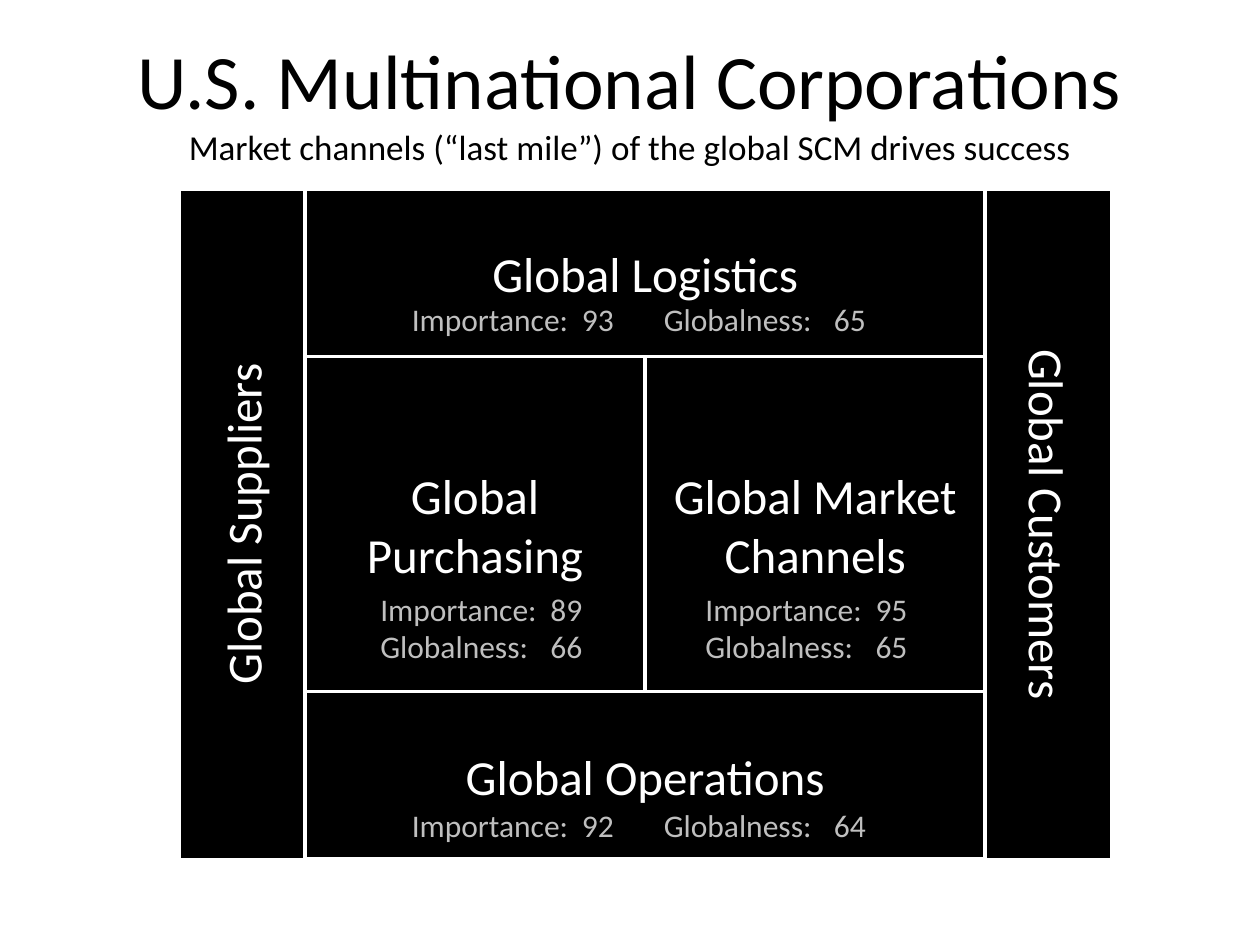
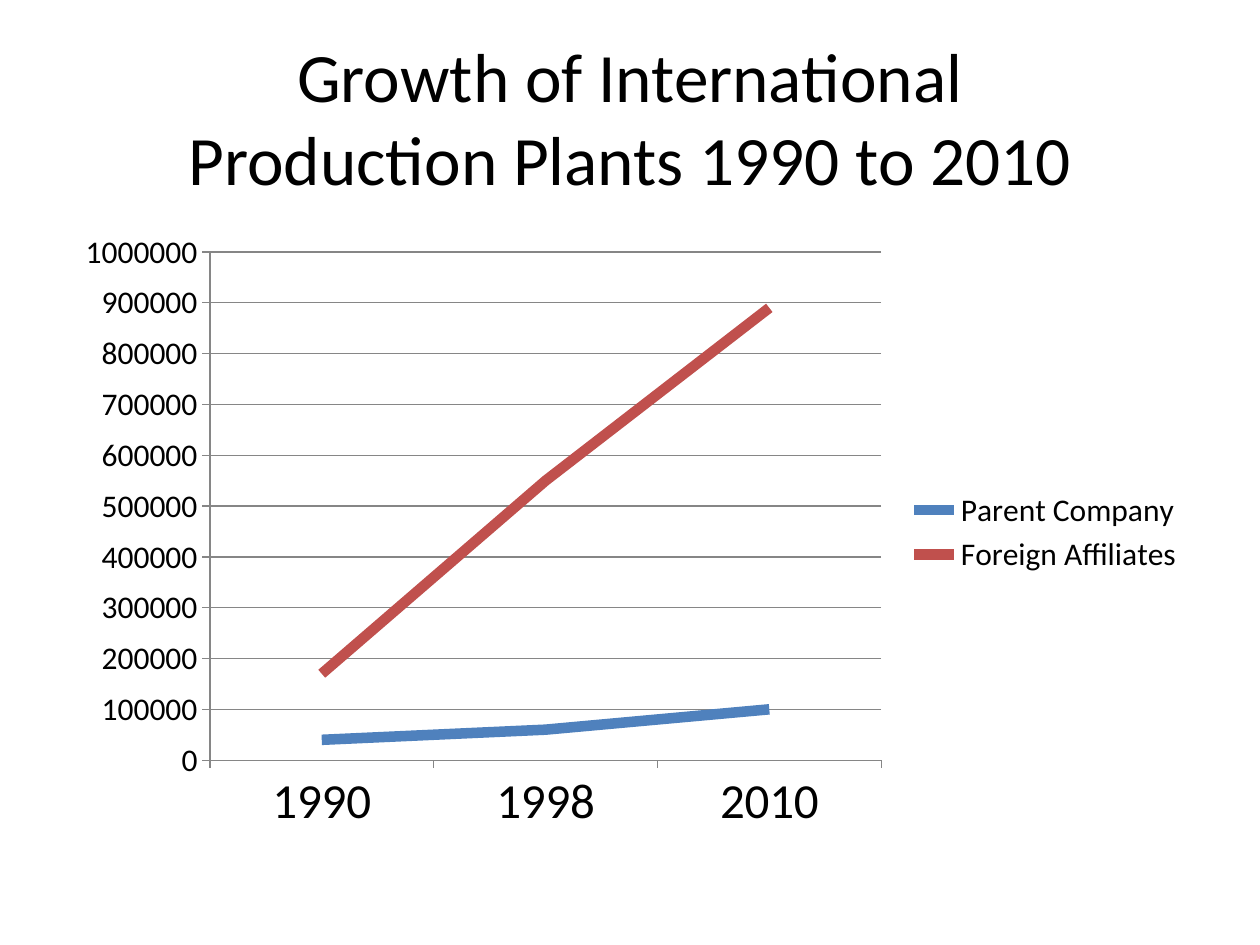
from dataclasses import dataclass

from lxml.etree import SubElement
from pptx import Presentation
from pptx.chart.data import CategoryChartData
from pptx.dml.color import RGBColor
from pptx.enum.chart import XL_CHART_TYPE as ChartType
from pptx.enum.chart import XL_LEGEND_POSITION as LegendPos
from pptx.enum.chart import XL_MARKER_STYLE as Marker
from pptx.enum.chart import XL_TICK_MARK as Tick
from pptx.enum.shapes import MSO_SHAPE as Shape
from pptx.enum.text import MSO_ANCHOR as Anchor
from pptx.enum.text import MSO_AUTO_SIZE as AutoSize
from pptx.enum.text import PP_ALIGN as Align
from pptx.oxml.ns import qn
from pptx.util import Emu, Inches, Pt

FONT = "Calibri"
BLACK, WHITE, SILVER, AXIS_GREY = "000000", "FFFFFF", "BFBFBF", "868686"
BLUE, RED = "4F81BD", "C0504D"

COLS = (1.42, 2.42, 5.12, 7.82, 8.82)
ROWS = tuple(1.5 + 1.33 * i for i in range(5))
SCORE_TABS = (1.35, 2.0, 3.35)


@dataclass(frozen=True)
class Block:
    label: str
    col: int
    row: int
    colspan: int = 1
    rowspan: int = 1
    rotation: int = 0


@dataclass(frozen=True)
class Score:
    left: float
    top: float
    width: float
    height: float
    lines: tuple[str, ...]


@dataclass(frozen=True)
class Series:
    name: str
    values: tuple[int, ...]
    color: str


BLOCKS = (
    Block("Global Operations", 1, 3, colspan=2),
    Block("Global Logistics", 1, 0, colspan=2),
    Block("Global Purchasing", 1, 1, rowspan=2),
    Block("Global Market Channels", 2, 1, rowspan=2),
    Block("Global Suppliers", 0, 0, rowspan=4, rotation=270),
    Block("Global Customers", 3, 0, rowspan=4, rotation=90),
)
SCORES = (
    Score(3.17, 2.33, 3.83, 0.4, ("Importance:\t93\tGlobalness:\t65",)),
    Score(2.92, 4.63, 1.92, 0.71, ("Importance:\t89", "Globalness:\t66")),
    Score(5.5, 4.63, 1.92, 0.71, ("Importance:\t95", "Globalness:\t65")),
    Score(3.17, 6.35, 3.83, 0.4, ("Importance:\t92\tGlobalness:\t64",)),
)
YEARS = ("1990", "1998", "2010")
PLANTS = (
    Series("Parent Company", (40000, 60000, 100000), BLUE),
    Series("Foreign Affiliates", (170000, 550000, 890000), RED),
)


def rgb(value: str) -> RGBColor:
    return RGBColor.from_string(value)


def add_run(p, text: str, size: float, color: str) -> None:
    r = p.add_run()
    r.text = text
    r.font.name = FONT
    r.font.size = Pt(size)
    r.font.color.rgb = rgb(color)


def add_title(s, top: float, lines: tuple[tuple[str, float], ...]) -> None:
    tf = s.shapes.add_textbox(Inches(0.5), Inches(top), Inches(9), Inches(1.25)).text_frame
    tf.word_wrap = True
    tf.vertical_anchor = Anchor.MIDDLE
    p = tf.paragraphs[0]
    p.alignment = Align.CENTER
    for i, (text, size) in enumerate(lines):
        if i:
            p.add_line_break()
        add_run(p, text, size, BLACK)


def add_block(s, block: Block) -> None:
    left, top = COLS[block.col], ROWS[block.row]
    width = COLS[block.col + block.colspan] - left
    height = ROWS[block.row + block.rowspan] - top
    if block.rotation:
        left, top = left + (width - height) / 2, top + (height - width) / 2
        width, height = height, width
    sp = s.shapes.add_shape(Shape.RECTANGLE, *map(Inches, (left, top, width, height)))
    sp.rotation = block.rotation
    sp.shadow.inherit = False
    sp.fill.solid()
    sp.fill.fore_color.rgb = rgb(BLACK)
    sp.line.color.rgb = rgb(WHITE)
    sp.line.width = Pt(2)
    tf = sp.text_frame
    tf.word_wrap = True
    tf.vertical_anchor = Anchor.MIDDLE
    p = tf.paragraphs[0]
    p.alignment = Align.CENTER
    add_run(p, block.label, 28, WHITE)


def add_score(s, score: Score) -> None:
    box = map(Inches, (score.left, score.top, score.width, score.height))
    tf = s.shapes.add_textbox(*box).text_frame
    tf.word_wrap = True
    tf.auto_size = AutoSize.SHAPE_TO_FIT_TEXT
    for i, line in enumerate(score.lines):
        p = tf.add_paragraph() if i else tf.paragraphs[0]
        tabs = SubElement(p._p.get_or_add_pPr(), qn("a:tabLst"))
        for stop in SCORE_TABS[:line.count("\t") or 1]:
            SubElement(tabs, qn("a:tab"), pos=str(Emu(Inches(stop))), algn="l")
        add_run(p, line, 18, SILVER)


def add_plants_chart(s) -> None:
    data = CategoryChartData()
    data.categories = YEARS
    for series in PLANTS:
        data.add_series(series.name, series.values)
    box = map(Inches, (0.5, 1.75, 9, 4.95))
    chart = s.shapes.add_chart(ChartType.LINE, *box, data).chart
    chart.has_title = False
    chart.font.name = FONT
    chart.font.size = Pt(18)
    chart.font.color.rgb = rgb(BLACK)
    chart.has_legend = True
    chart.legend.position = LegendPos.RIGHT
    chart.legend.include_in_layout = False
    plot = chart.plots[0]
    plot.vary_by_categories = False
    for line, series in zip(plot.series, PLANTS):
        line.smooth = False
        line.marker.style = Marker.NONE
        line.format.line.width = Pt(6)
        line.format.line.color.rgb = rgb(series.color)
    years, counts = chart.category_axis, chart.value_axis
    for axis in (years, counts):
        axis.major_tick_mark = Tick.OUTSIDE
        axis.minor_tick_mark = Tick.NONE
        axis.format.line.color.rgb = rgb(AXIS_GREY)
    years.tick_labels.font.size = Pt(28)
    counts.minimum_scale, counts.maximum_scale = 0, 1000000
    counts.major_unit = 100000
    counts.has_major_gridlines = True
    counts.major_gridlines.format.line.color.rgb = rgb(AXIS_GREY)


def build_channels(s) -> None:
    add_title(s, 0.17, (
        ("U.S. Multinational Corporations", 44),
        ("Market channels (“last mile”) of the global SCM drives success", 20),
    ))
    for block in BLOCKS:
        add_block(s, block)
    for score in SCORES:
        add_score(s, score)


def build_growth(s) -> None:
    add_title(s, 0.3, (
        ("Growth of International", 39.6),
        ("Production Plants 1990 to 2010", 39.6),
    ))
    add_plants_chart(s)


def main() -> None:
    prs = Presentation()
    prs.slide_width, prs.slide_height = Inches(10), Inches(7.5)
    for build in (build_channels, build_growth):
        build(prs.slides.add_slide(prs.slide_layouts[6]))
    prs.save("out.pptx")


if __name__ == "__main__":
    main()
